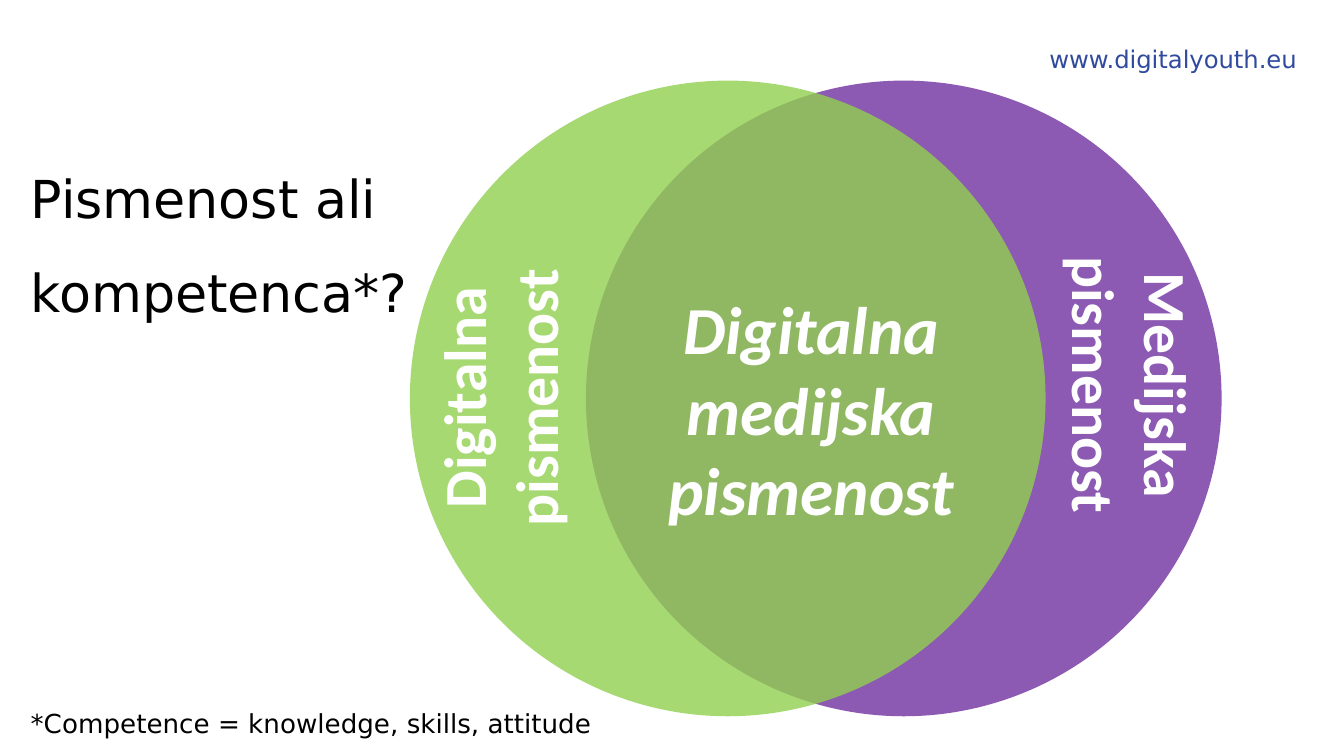
import pptx
import pptx.util
import pptx.dml.color
import pptx.enum.shapes
import pptx.enum.text
import pptx.oxml
import pptx.oxml.ns
from dataclasses import dataclass

Inches = pptx.util.Inches
Align = pptx.enum.text.PP_ALIGN


@dataclass(frozen=True)
class Theme:
    black: str = "000000"
    white: str = "FFFFFF"
    link: str = "304A9D"
    media: str = "7030A0"
    digital: str = "92D050"
    opacity: int = 80
    plain: str = "DejaVu Sans"
    diagram: str = "Calibri"
    title_size: int = 28
    circle_size: int = 32
    overlap_size: int = 36
    note_size: int = 14
    link_size: int = 13


THEME = Theme()
PAGE_WIDTH = 10
PAGE_HEIGHT = PAGE_WIDTH * 9 / 16
TITLE = ("Pismenost ali kompetenca*?", (0.13, 0.95, 3.11, 1.51))
NOTE = ("*Competence = knowledge, skills, attitude", (0.13, 5.1, 4.44, 0.45))
ADDRESS = ("www.digitalyouth.eu", (7.71, 0.23, 2.42, 0.42))
OVERLAP = ("Digitalna medijska pismenost", (4.76, 2.09, 2.55, 2.04))
CIRCLES = [
    (4.36, THEME.media, "Medijska pismenost", (7.24, 2.25, 2.31, 1.23), 90),
    (3.05, THEME.digital, "Digitalna pismenost", (2.47, 2.27, 2.69, 1.38), 270),
]
CIRCLE_TOP, DIAMETER = 0.6, 4.73


def color(value):
    return pptx.dml.color.RGBColor.from_string(value)


def write(box, text, font, size, ink, align=Align.LEFT, spacing=None,
          bold=False, italic=False, margin=0.05):
    frame = box.text_frame
    frame.text = text
    frame.word_wrap = True
    frame.auto_size = pptx.enum.text.MSO_AUTO_SIZE.NONE
    frame.vertical_anchor = pptx.enum.text.MSO_ANCHOR.TOP
    frame.margin_left = frame.margin_right = Inches(0.1)
    frame.margin_top = frame.margin_bottom = Inches(margin)
    para = frame.paragraphs[0]
    para.alignment = align
    para.line_spacing = spacing
    span = para.runs[0]
    span.font.name = font
    span.font.size = pptx.util.Pt(size)
    span.font.color.rgb = color(ink)
    span.font.bold = bold
    span.font.italic = italic


def add_text(slide, content, *style, **options):
    text, place = content
    box = slide.shapes.add_textbox(*map(Inches, place))
    write(box, text, *style, **options)
    return box


def add_circle(slide, left, fill):
    circle = slide.shapes.add_shape(
        pptx.enum.shapes.MSO_SHAPE.OVAL, Inches(left), Inches(CIRCLE_TOP),
        Inches(DIAMETER), Inches(DIAMETER))
    circle.shadow.inherit = False
    circle.line.fill.background()
    circle.fill.solid()
    circle.fill.fore_color.rgb = color(fill)
    tint = circle.element.spPr.find(".//" + pptx.oxml.ns.qn("a:srgbClr"))
    alpha = pptx.oxml.parse_xml(
        f'<a:alpha {pptx.oxml.ns.nsdecls("a")} val="{THEME.opacity * 1000}"/>')
    tint.append(alpha)


def main():
    deck = pptx.Presentation()
    deck.slide_width, deck.slide_height = Inches(PAGE_WIDTH), Inches(PAGE_HEIGHT)
    slide = deck.slides.add_slide(deck.slide_layouts[5])

    text, place = TITLE
    title = slide.shapes.title
    title.left, title.top, title.width, title.height = map(Inches, place)
    write(title, text, THEME.plain, THEME.title_size, THEME.black, spacing=1.5)

    add_text(slide, ADDRESS, THEME.plain, THEME.link_size, THEME.link, margin=0.1)

    for left, fill, label, place, turn in CIRCLES:
        add_circle(slide, left, fill)
        box = add_text(slide, (label, place), THEME.diagram, THEME.circle_size,
                       THEME.white, align=Align.CENTER, bold=True)
        box.rotation = turn

    add_text(slide, OVERLAP, THEME.diagram, THEME.overlap_size, THEME.white,
             align=Align.CENTER, bold=True, italic=True)
    add_text(slide, NOTE, THEME.plain, THEME.note_size, THEME.black, spacing=1.5)
    deck.save("out.pptx")


if __name__ == "__main__":
    main()
